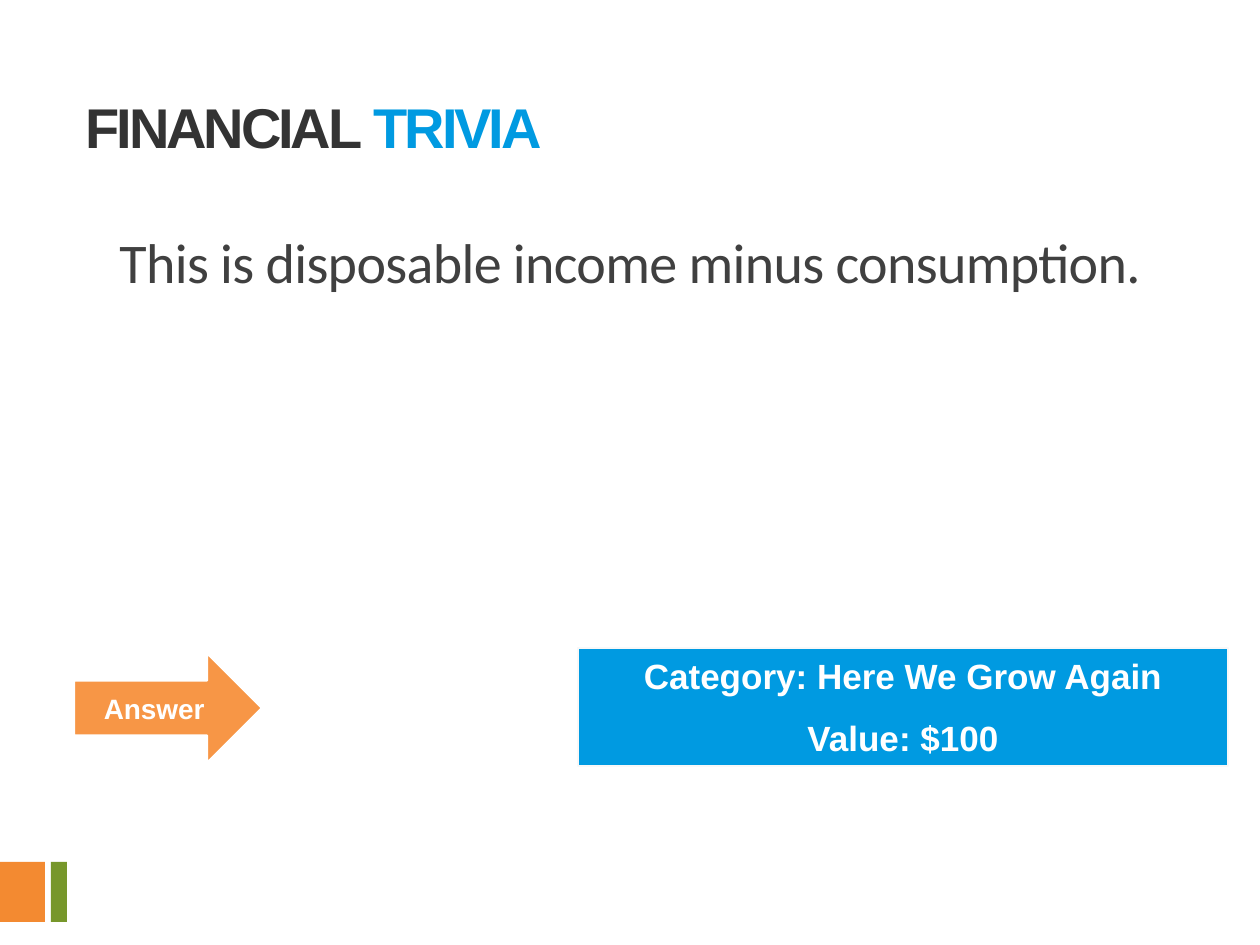
from dataclasses import dataclass

from pptx import Presentation
from pptx.dml.color import RGBColor
from pptx.enum.shapes import MSO_SHAPE
from pptx.enum.text import MSO_ANCHOR, PP_ALIGN
from pptx.util import Pt

EMU_PER_PX = 914400 / 126
TITLE_ONLY = 5
RECTANGLE, RIGHT_ARROW = MSO_SHAPE.RECTANGLE, MSO_SHAPE.RIGHT_ARROW
TOP, MIDDLE = MSO_ANCHOR.TOP, MSO_ANCHOR.MIDDLE
LEFT, CENTER = PP_ALIGN.LEFT, PP_ALIGN.CENTER

COLORS = {
    "orange": "F38A31",
    "green": "77972B",
    "blue": "009AE1",
    "arrow": "F79646",
    "off_white": "F8F8F8",
    "white": "FFFFFF",
    "title": "333333",
    "body": "404040",
}


@dataclass(frozen=True)
class Box:
    left: int
    top: int
    width: int
    height: int

    def emu(self) -> list[int]:
        return [px(n) for n in (self.left, self.top, self.width, self.height)]


@dataclass(frozen=True)
class Block:
    box: Box
    fill: str
    kind: MSO_SHAPE = RECTANGLE
    line: str = ""
    line_width: float = 0
    text: str = ""
    size: int = 0
    anchor: MSO_ANCHOR = TOP


BLOCKS = [
    Block(Box(0, 862, 45, 60), "orange"),
    Block(Box(51, 862, 16, 60), "green"),
    Block(Box(578, 648, 650, 118), "blue", line="off_white", line_width=0.75,
          text="Category: Here We Grow Again\nValue: $100", size=20),
    Block(Box(74, 653, 188, 110), "arrow", RIGHT_ARROW, "white", 1.25,
          "Answer", 16, MIDDLE),
]


def px(pixels: int) -> int:
    return round(pixels * EMU_PER_PX)


def rgb(name: str) -> RGBColor:
    return RGBColor.from_string(COLORS[name])


def format_run(run, size: int, color: str, font: str = "Arial",
               bold: bool = True, spacing: int = 0) -> None:
    """Set the font; spacing is in hundredths of a point."""
    run.font.name = font
    run.font.size = Pt(size)
    run.font.bold = bold
    run.font.color.rgb = rgb(color)
    if spacing:
        run.font._element.set("spc", str(spacing))


def draw_block(slide, block: Block) -> None:
    shape = slide.shapes.add_shape(block.kind, *block.box.emu())
    shape.shadow.inherit = False
    shape.fill.solid()
    shape.fill.fore_color.rgb = rgb(block.fill)
    if block.line:
        shape.line.color.rgb = rgb(block.line)
        shape.line.width = Pt(block.line_width)
    else:
        shape.line.fill.background()
    if not block.text:
        return
    frame = shape.text_frame
    frame.text = block.text
    frame.word_wrap = True
    frame.vertical_anchor = block.anchor
    for index, paragraph in enumerate(frame.paragraphs):
        paragraph.alignment = CENTER
        if index:
            paragraph.space_before = Pt(11.5)
        format_run(paragraph.runs[0], block.size, "white")


def draw_title(slide) -> None:
    title = slide.shapes.title
    title.left, title.top, title.width, title.height = Box(73, 94, 983, 74).emu()
    title.text_frame.vertical_anchor = TOP
    paragraph = title.text_frame.paragraphs[0]
    paragraph.alignment = LEFT
    paragraph.line_spacing = 0.9
    for text, color in (("FINANCIAL ", "title"), ("TRIVIA", "blue")):
        run = paragraph.add_run()
        run.text = text
        format_run(run, 32, color, spacing=-180)


def draw_question(slide) -> None:
    frame = slide.shapes.add_textbox(*Box(63, 221, 1134, 81).emu()).text_frame
    frame.word_wrap = True
    frame.text = "This is disposable income minus consumption."
    paragraph = frame.paragraphs[0]
    paragraph.alignment = CENTER
    format_run(paragraph.runs[0], 32, "body", "Calibri", bold=False, spacing=-40)


def main() -> None:
    presentation = Presentation()
    presentation.slide_width, presentation.slide_height = px(1260), px(945)
    slide = presentation.slides.add_slide(presentation.slide_layouts[TITLE_ONLY])
    draw_title(slide)
    draw_question(slide)
    for block in BLOCKS:
        draw_block(slide, block)
    presentation.save("out.pptx")


if __name__ == "__main__":
    main()
